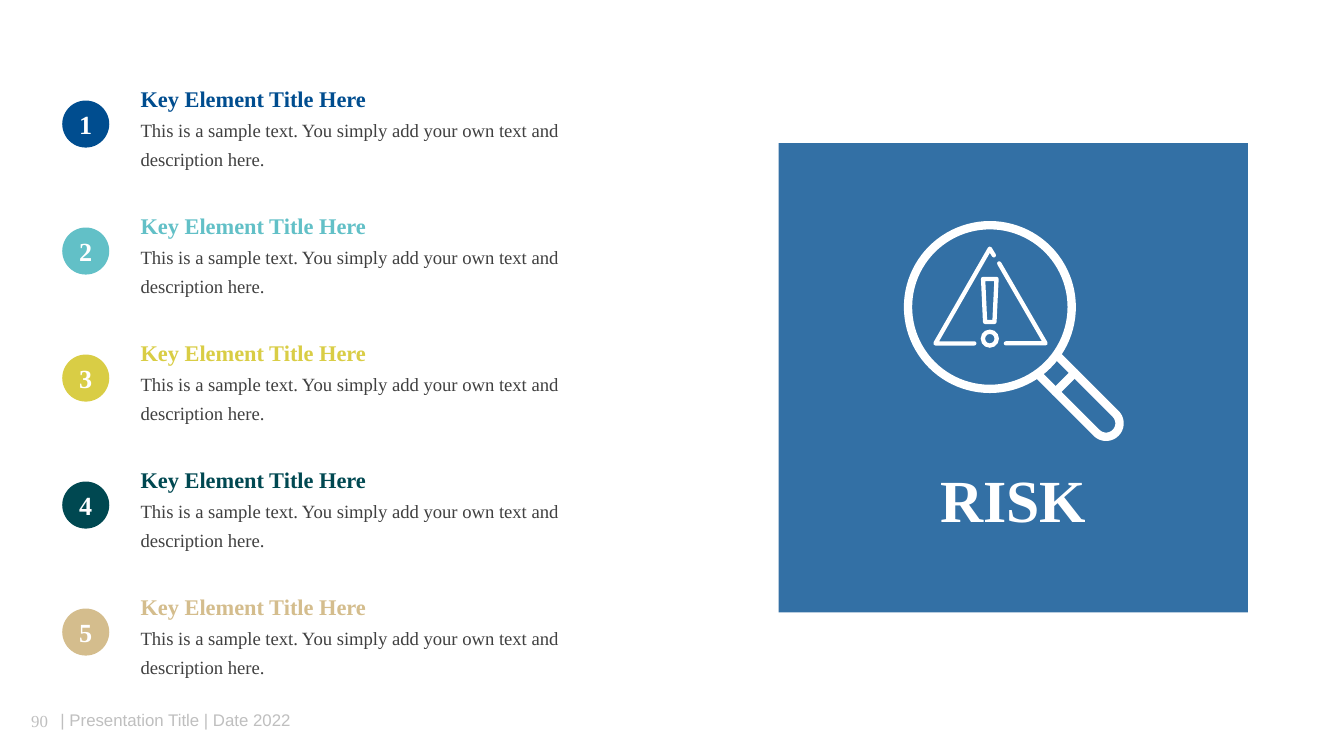
import copy
import math
from dataclasses import dataclass

from lxml import etree
from pptx import Presentation
from pptx import util as u
from pptx.dml.color import RGBColor
from pptx.enum import shapes, text
from pptx.oxml.ns import qn


@dataclass(frozen=True)
class Theme:
    serif: str = "Times New Roman"
    sans: str = "Arial"
    accents: tuple = ("004D8F", "62C0C7", "D9CD45", "004851", "D4BD8D")
    white: str = "FFFFFF"
    body: str = "404040"
    muted: str = "BFBFBF"
    risk_size: float = 32
    number_size: float = 14
    heading_size: float = 12
    body_size: float = 10
    footer_size: float = 9
    thick: float = 4.5
    thin: float = 2.3


THEME = Theme()
WIDTH = u.Inches(10)
HEIGHT = u.Emu(WIDTH * 9 // 16)
CELL = WIDTH / 100
ROW_PITCH = 9.45
HEADING = "Key Element Title Here"
DESCRIPTION = "This is a sample text. You simply add your own text and description here."


def cells(*values):
    return [u.Emu(round(v * CELL)) for v in values]


def format_run(r, size, color, bold=False, font=THEME.serif):
    r.font.name = font
    r.font.size = u.Pt(size)
    r.font.bold = bold
    r.font.color.rgb = RGBColor.from_string(color)


def set_text(sp, content, align):
    tf = sp.text_frame
    tf.text = content
    tf.word_wrap = True
    tf.auto_size = text.MSO_AUTO_SIZE.NONE
    tf.vertical_anchor = text.MSO_ANCHOR.MIDDLE
    tf.margin_left = tf.margin_right = tf.margin_top = tf.margin_bottom = 0
    p = tf.paragraphs[0]
    p.alignment = align
    return p


def add_shape(s, kind, box, color):
    sp = s.shapes.add_shape(kind, *cells(*box))
    sp.shadow.inherit = False
    sp.fill.solid()
    sp.fill.fore_color.rgb = RGBColor.from_string(color)
    sp.line.fill.background()
    return sp


def add_label(s, box, content, size, color, align=text.PP_ALIGN.LEFT, font=THEME.serif):
    p = set_text(s.shapes.add_textbox(*cells(*box)), content, align)
    format_run(p.runs[0], size, color, font=font)


def add_ring(s, x, y, radius, thickness):
    box = (x - radius, y - radius, 2 * radius, 2 * radius)
    sp = add_shape(s, shapes.MSO_SHAPE.DONUT, box, THEME.white)
    sp.adjustments[0] = thickness / (2 * radius)


def add_stroke(s, points, width, close=False):
    first, *rest = [cells(*point) for point in points]
    builder = s.shapes.build_freeform(*first)
    builder.add_line_segments(rest, close=close)
    sp = builder.convert_to_shape()
    sp.shadow.inherit = False
    sp.fill.background()
    sp.line.color.rgb = RGBColor.from_string(THEME.white)
    sp.line.width = u.Pt(width)
    ln = sp._element.spPr.find(qn("a:ln"))
    ln.set("cap", "rnd")
    etree.SubElement(ln, qn("a:round"))


def add_handle(s):
    tip_x, tip_y, radius = 82.3, 31.5, 1
    arc = [
        (tip_x + radius * math.cos(math.radians(a)), tip_y + radius * math.sin(math.radians(a)))
        for a in range(-45, 136, 10)
    ]
    ends = arc[0], arc[-1]
    length, collar = 4.3, 3.05
    start, end = [(x - length, y - length) for x, y in ends]
    add_stroke(s, [start, *arc, end], THEME.thick)
    add_stroke(s, [(x - collar, y - collar) for x, y in ends], THEME.thick)


def add_magnifier(s):
    add_ring(s, 73.65, 22.85, 6.4, 0.62)
    add_handle(s)
    add_stroke(s, [(72.5, 25.55), (69.6, 25.55), (73.65, 18.5), (73.95, 19)], THEME.thin)
    add_stroke(s, [(74.35, 19.6), (77.8, 25.55), (74.85, 25.55)], THEME.thin)
    add_stroke(s, [(73.15, 20.75), (74.15, 20.75), (74, 23.95), (73.3, 23.95)], THEME.thin, True)
    add_ring(s, 73.65, 25.2, 0.68, 0.33)


def add_risk_panel(s):
    panel = add_shape(s, shapes.MSO_SHAPE.RECTANGLE, (57.94, 10.65, 34.92, 34.92), THEME.accents[0])
    color = panel._element.spPr.find(qn("a:solidFill"))[0]
    etree.SubElement(color, qn("a:alpha"), val="80000")
    add_magnifier(s)
    title = s.shapes.title
    panel._element.getparent().append(title._element)
    title.left, title.top, title.width, title.height = cells(66.1, 34.4, 18.6, 5.4)
    p = set_text(title, "RISK", text.PP_ALIGN.CENTER)
    format_run(p.runs[0], THEME.risk_size, THEME.white, True)


def add_element(s, index, color):
    offset = index * ROW_PITCH
    badge = add_shape(s, shapes.MSO_SHAPE.OVAL, (4.63, 7.48 + offset, 3.5, 3.5), color)
    p = set_text(badge, str(index + 1), text.PP_ALIGN.CENTER)
    format_run(p.runs[0], THEME.number_size, THEME.white, True)

    sp = s.shapes.add_textbox(*cells(10.46, 5.72 + offset, 35.6, 7))
    p = set_text(sp, f"{HEADING}\v{DESCRIPTION}", text.PP_ALIGN.LEFT)
    p.line_spacing = 1.3
    p.space_after = u.Pt(10)
    heading, description = p.runs
    format_run(heading, THEME.heading_size, color, True)
    format_run(description, THEME.body_size, THEME.body)
    p._p.find(qn("a:br")).append(copy.deepcopy(heading._r.rPr))


def add_footer(s):
    add_label(s, (0.8, 52.1, 4.3, 3), "90", THEME.footer_size, THEME.muted, text.PP_ALIGN.CENTER)
    add_label(s, (4.5, 52.8, 20, 1.5), "| Presentation Title | Date 2022",
              THEME.footer_size, THEME.muted, font=THEME.sans)


def main():
    prs = Presentation()
    prs.slide_width, prs.slide_height = WIDTH, HEIGHT
    s = prs.slides.add_slide(prs.slide_layouts[5])
    add_footer(s)
    add_risk_panel(s)
    for index, color in enumerate(THEME.accents):
        add_element(s, index, color)
    prs.save("out.pptx")


if __name__ == "__main__":
    main()
